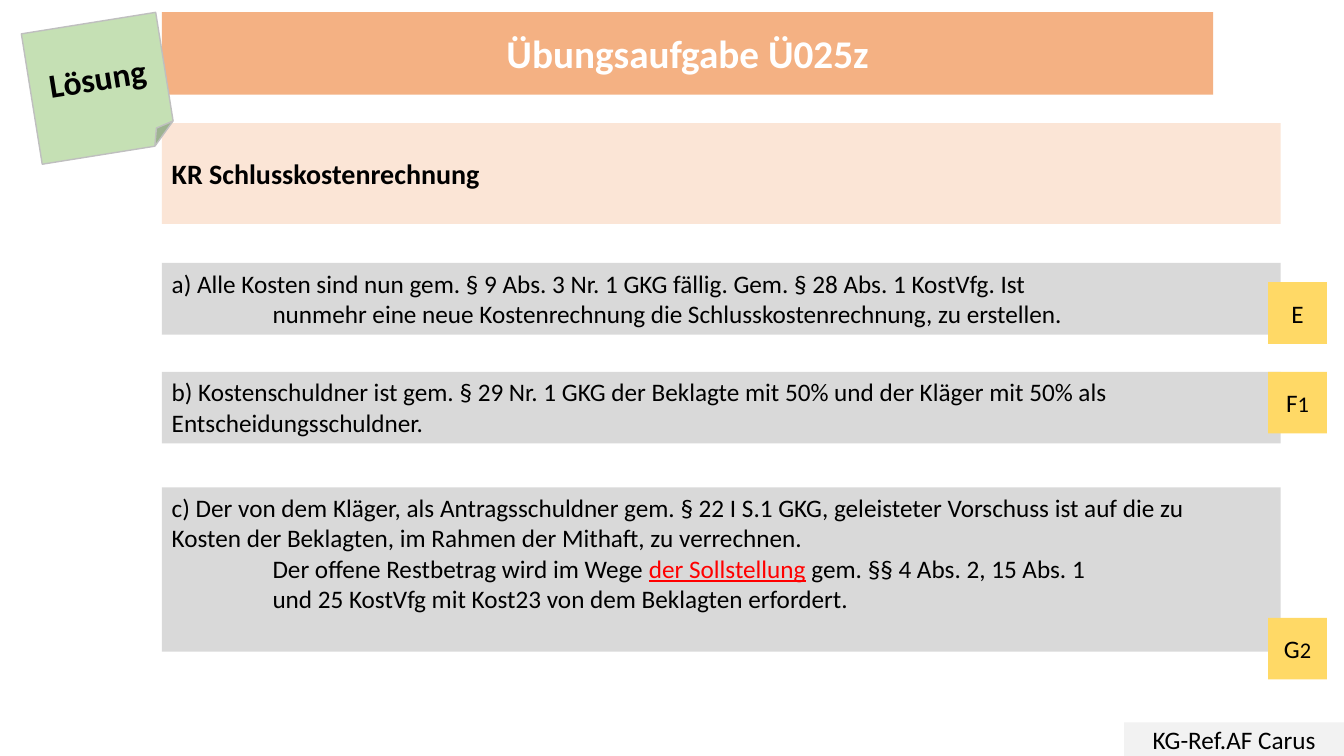
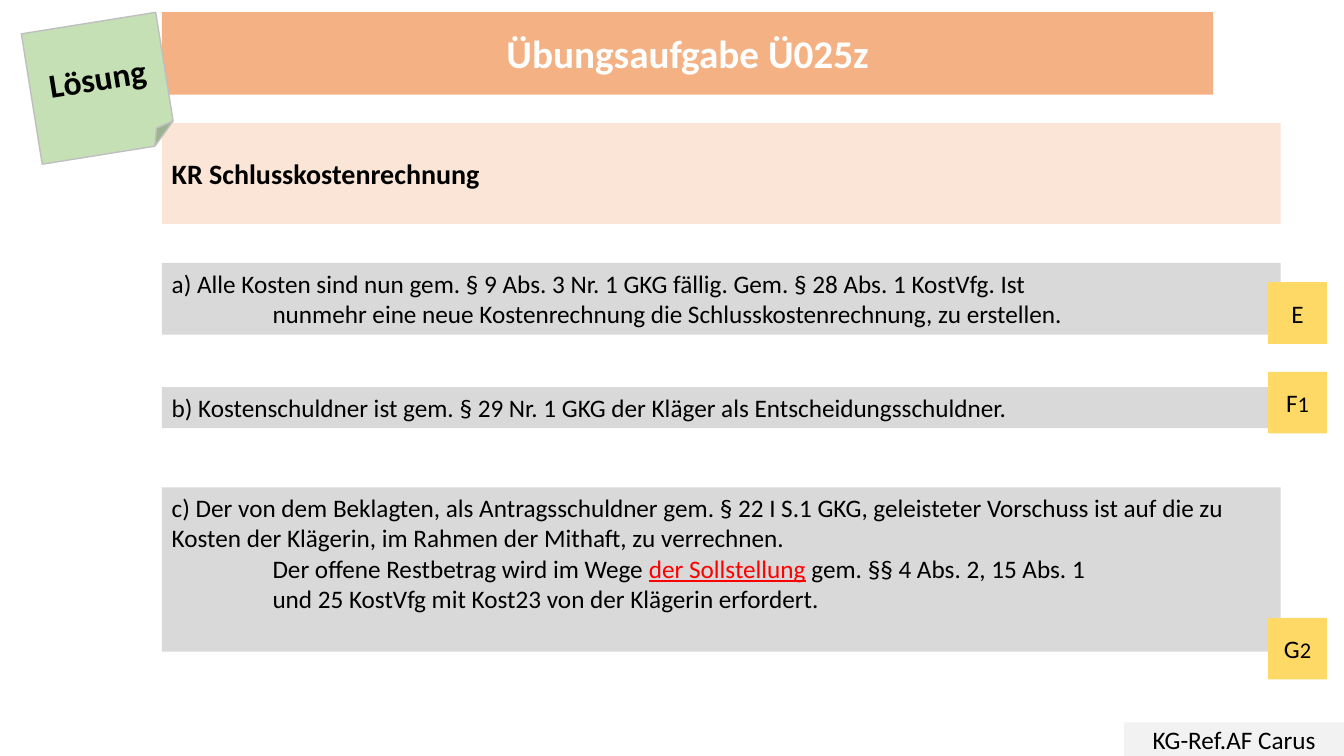
from lxml import etree
from pptx import Presentation
from pptx.dml.color import RGBColor
from pptx.enum.shapes import MSO_SHAPE as Preset
from pptx.enum.text import MSO_ANCHOR as Anchor, MSO_AUTO_SIZE as AutoSize, PP_ALIGN as Align
from pptx.oxml import parse_xml
from pptx.oxml.ns import nsdecls
from pptx.util import Pt

COLOURS = {
    "title": "F4B183", "heading": "FBE5D6", "answer": "D9D9D9", "badge": "FFD966",
    "note": "C5E0B4", "note_line": "BFBFBF", "footer": "F2F2F2",
    "text": "000000", "title_text": "FFFFFF", "accent": "FF0000",
}
FONT = "Calibri"

TITLE = "Übungsaufgabe Ü025z"
HEADING = "KR Schlusskostenrechnung"
NOTE = "Lösung"
FOOTER = "KG-Ref.AF Carus"
BADGES = [("E", "", 201.6), ("F", "1", 265.7), ("G", "2", 441.4)]  # letter, digit, top

# A line is (indent level, runs); a run is (text, formats).
ACCENT = {"color": "accent", "underline": True}
ANSWER_A = [
    (0, [("a) Alle Kosten sind nun gem. § 9 Abs. 3 Nr. 1 GKG fällig. Gem. § 28 Abs. 1 KostVfg. Ist", {})]),
    (1, [("nunmehr eine neue Kostenrechnung die Schlusskostenrechnung, zu erstellen.", {})]),
]


def answer_c(payer, debtor, debtor_dative):
    return [
        (0, [(f"c) Der von dem {payer}, als Antragsschuldner gem. § 22 I S.1 GKG, "
              "geleisteter Vorschuss ist auf die zu", {})]),
        (0, [(f"Kosten der {debtor}, im Rahmen der Mithaft, zu verrechnen.", {})]),
        (1, [("Der offene Restbetrag wird im Wege ", {}), ("der Sollstellung", ACCENT),
             (" gem. §§ 4 Abs. 2, 15 Abs. 1", {})]),
        (1, [(f"und 25 KostVfg mit Kost23 von {debtor_dative} erfordert.", {})]),
    ]


SLIDES = [
    {
        "b": [(0, [("b) Kostenschuldner ist gem. § 29 Nr. 1 GKG der Beklagte mit 50% "
                    "und der Kläger mit 50% als", {})]),
              (0, [("Entscheidungsschuldner.", {})])],
        "c": answer_c("Kläger", "Beklagten", "dem Beklagten"),
    },
    {
        "b": [(0, [("b) Kostenschuldner ist gem. § 29 Nr. 1 GKG der Kläger "
                    "als Entscheidungsschuldner.", {})])],
        "c": answer_c("Beklagten", "Klägerin", "der Klägerin"),
    },
]

SLIDE_WIDTH, SLIDE_HEIGHT = 960, 540
LEFT, BAND_WIDTH = 115.6, 799.2
LINE_HEIGHT, INSET, INDENT = 22, 3.6, 72
ANSWER_CENTRES = {"a": 213.4, "b": 291.2, "c": 406.8}
SPARE_LINES = {"c": 1}


def rgb(name):
    return RGBColor.from_string(COLOURS[name])


def write(shape, lines, size, bold=False, color="text", align=Align.CENTER, anchor=Anchor.MIDDLE):
    frame = shape.text_frame
    settings = {
        "word_wrap": True, "auto_size": AutoSize.NONE, "vertical_anchor": anchor,
        "margin_left": Pt(7.2), "margin_right": Pt(7.2),
        "margin_top": Pt(INSET), "margin_bottom": Pt(INSET),
    }
    for name, value in settings.items():
        setattr(frame, name, value)
    for number, (level, runs) in enumerate(lines):
        paragraph = frame.add_paragraph() if number else frame.paragraphs[0]
        paragraph.alignment = align
        if level:
            paragraph._p.get_or_add_pPr().set("marL", str(Pt(INDENT * level)))
        for text, formats in runs:
            run = paragraph.add_run()
            run.text = text
            values = {"name": FONT, "size": Pt(formats.get("size", size)), "bold": bold,
                      "underline": formats.get("underline", False)}
            for name, value in values.items():
                setattr(run.font, name, value)
            run.font.color.rgb = rgb(formats.get("color", color))


def add_box(slide, fill, box, preset=Preset.RECTANGLE):
    shape = slide.shapes.add_shape(preset, *map(Pt, box))
    shape.shadow.inherit = False
    shape.fill.solid()
    shape.fill.fore_color.rgb = rgb(fill)
    shape.line.fill.background()
    return shape


def add_title(slide):
    title = slide.shapes.title
    title.left, title.top, title.width, title.height = map(Pt, (LEFT, 8.6, 751, 59))
    outline = parse_xml(f'<a:prstGeom {nsdecls("a")} prst="roundRect"/>')
    etree.SubElement(outline, outline.tag.replace("prstGeom", "avLst"))
    title._element.spPr.append(outline)
    title.fill.solid()
    title.fill.fore_color.rgb = rgb("title")
    write(title, [(0, [(TITLE, {})])], 28, bold=True, color="title_text")


def add_frame(slide):
    """Add the title, heading band, footer and note that every slide has."""
    add_title(slide)
    heading = add_box(slide, "heading", (LEFT, 88, BAND_WIDTH, 72))
    write(heading, [(0, [(HEADING, {})])], 20, bold=True, align=Align.LEFT)
    footer = add_box(slide, "footer", (SLIDE_WIDTH - 157, SLIDE_HEIGHT - 24, 157, 24))
    write(footer, [(0, [(FOOTER, {})])], 18)
    note = add_box(slide, "note", (22.1, 15.9, 97.2, 94.3), Preset.FOLDED_CORNER)
    note.rotation = 350.9
    note.line.color.rgb = rgb("note_line")
    note.line.width = Pt(1)
    write(note, [(0, [(NOTE, {})])], 24, bold=True)


def add_answer(slide, letter, lines):
    height = (len(lines) + SPARE_LINES.get(letter, 0)) * LINE_HEIGHT + 2 * INSET
    top = ANSWER_CENTRES[letter] - height / 2
    answer = add_box(slide, "answer", (LEFT, top, BAND_WIDTH, height))
    write(answer, lines, 18, align=Align.LEFT, anchor=Anchor.TOP)


def add_badges(slide):
    for letter, digit, top in BADGES:
        badge = add_box(slide, "badge", (905.8, top, 42, 44))
        runs = [(letter, {})] + ([(digit, {"size": 16})] if digit else [])
        write(badge, [(0, runs)], 18)


def main():
    presentation = Presentation()
    presentation.slide_width, presentation.slide_height = Pt(SLIDE_WIDTH), Pt(SLIDE_HEIGHT)
    title_only = presentation.slide_layouts[5]
    for answers in SLIDES:
        slide = presentation.slides.add_slide(title_only)
        add_frame(slide)
        for letter, lines in {"a": ANSWER_A, **answers}.items():
            add_answer(slide, letter, lines)
        add_badges(slide)
    presentation.save("out.pptx")


if __name__ == "__main__":
    main()
